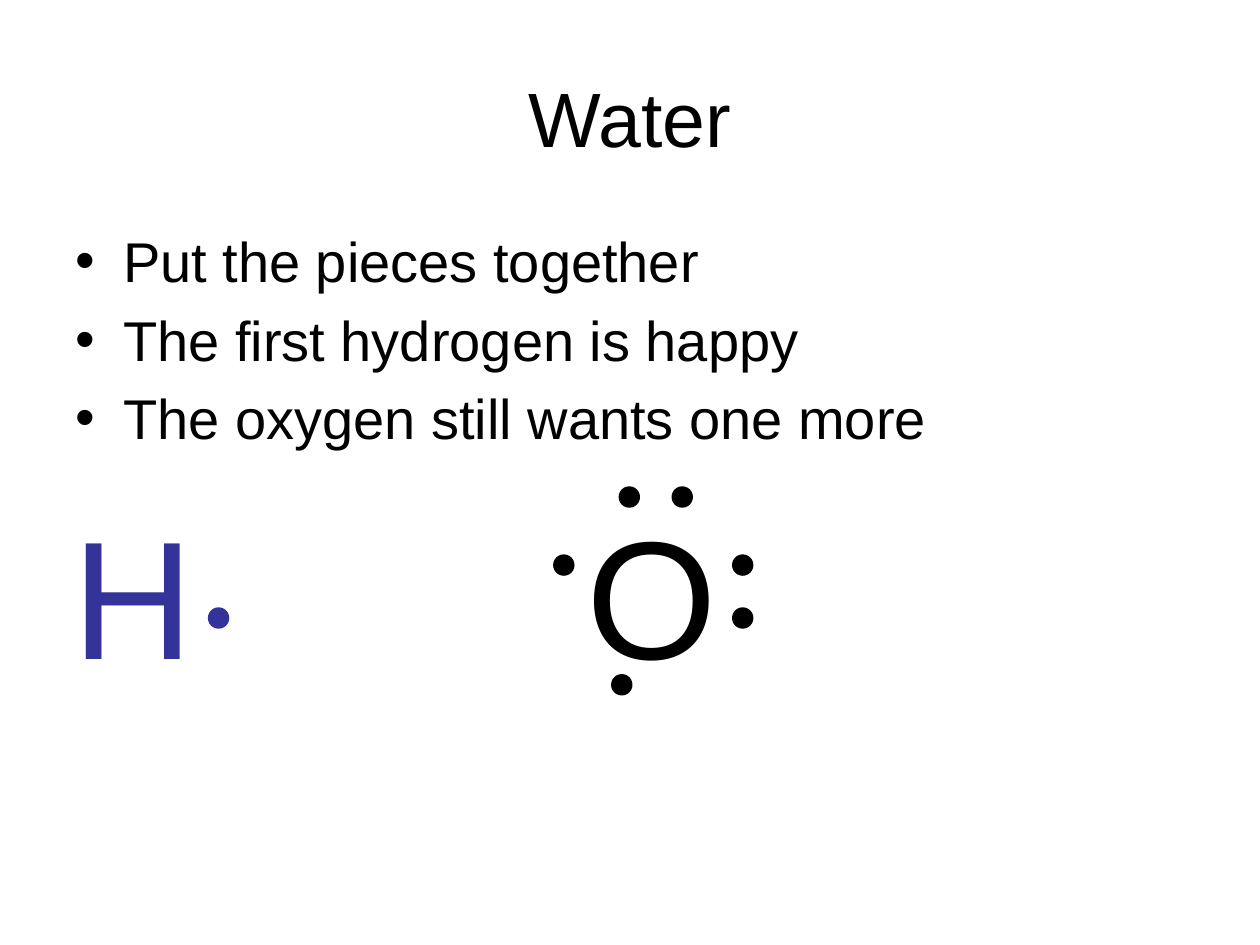
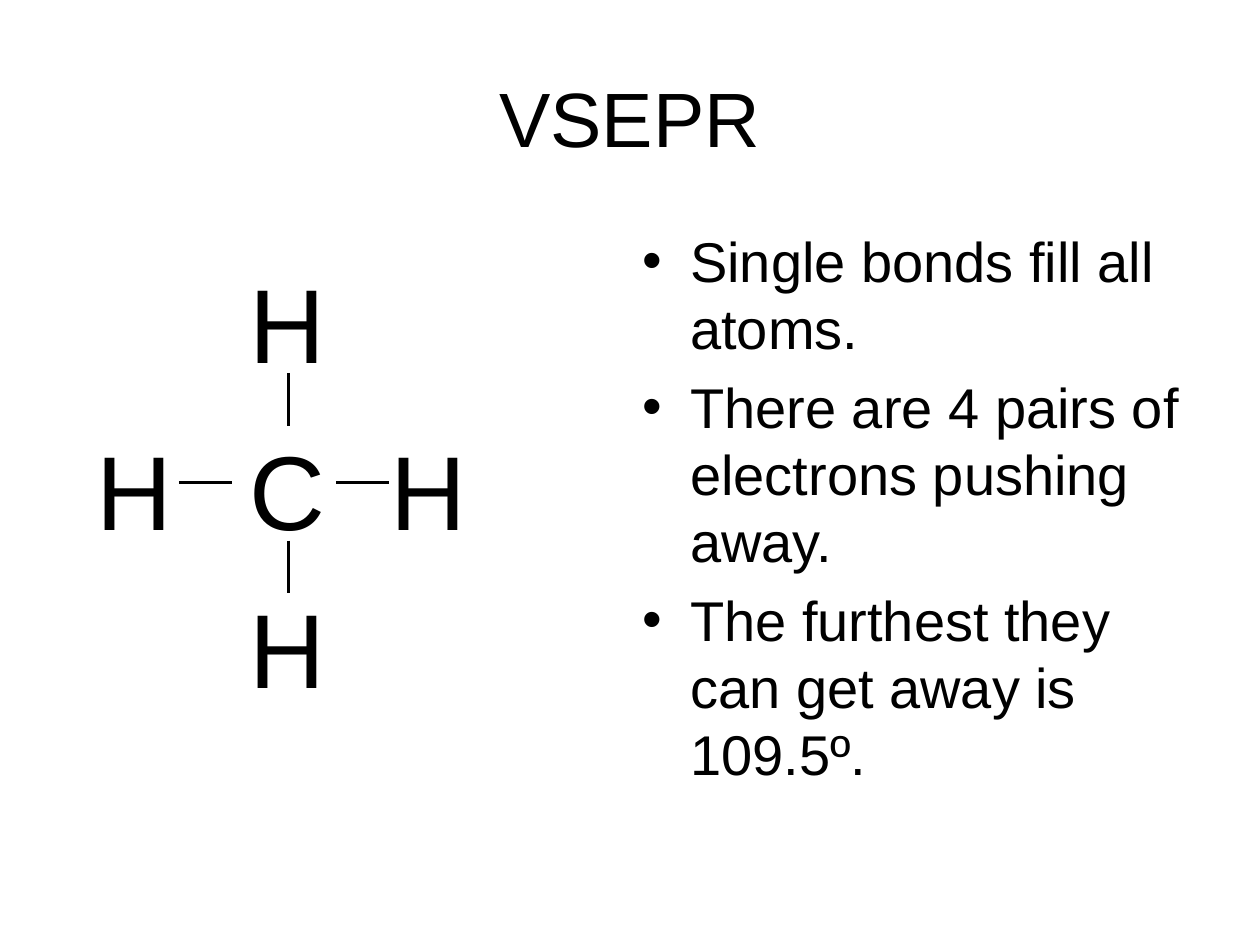
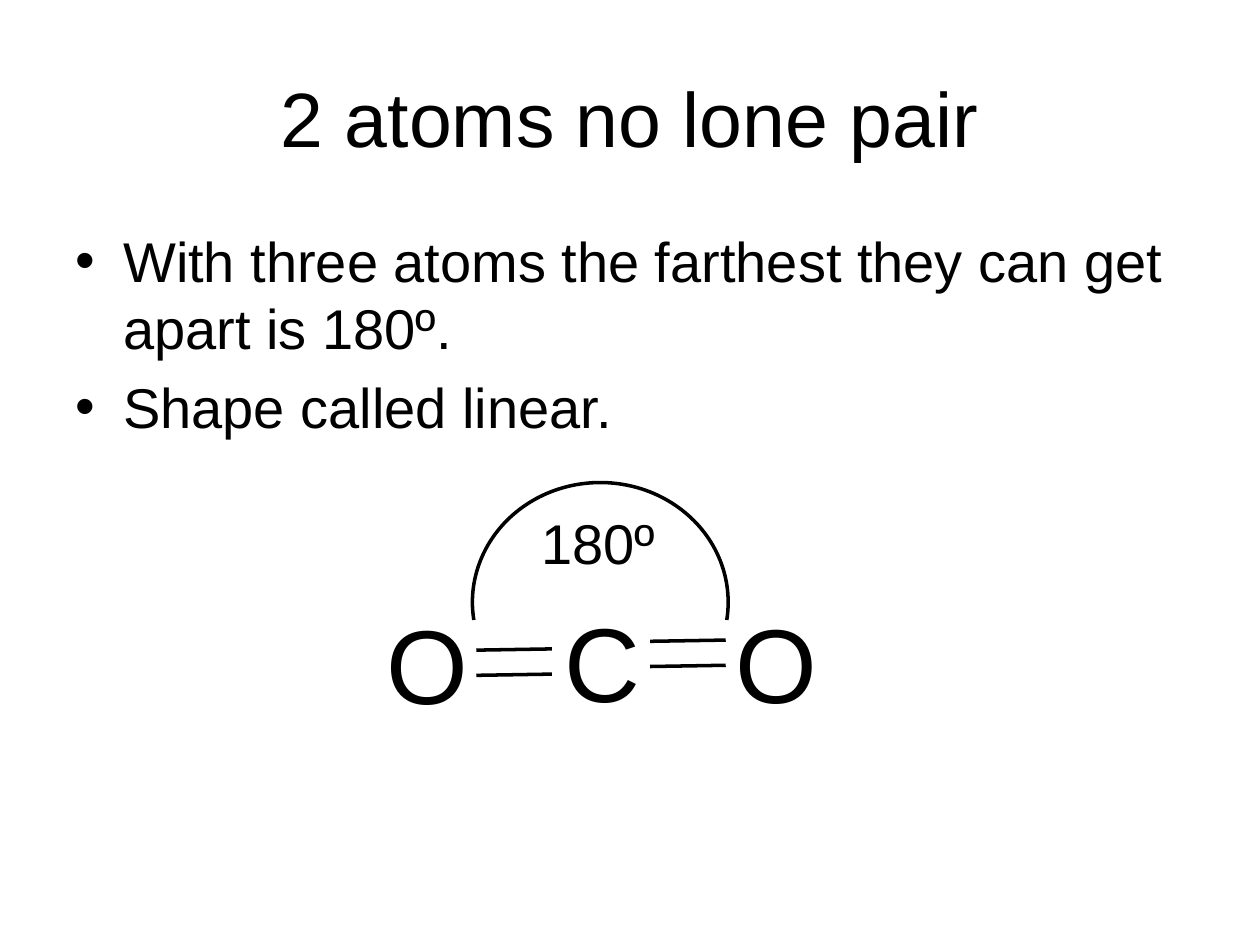
from dataclasses import dataclass
from typing import Any

from lxml import etree
from pptx import Presentation
from pptx.dml.color import RGBColor
from pptx.enum import shapes, text
from pptx.oxml import ns
from pptx import util as u

# Shared style
EMU_PER_PX = 9144  # 100 px to the inch
FONT = "Arial"
BLACK = RGBColor(0x00, 0x00, 0x00)
WHITE = RGBColor(0xFF, 0xFF, 0xFF)
BLUE = RGBColor(0x33, 0x33, 0x99)
TITLE_SIZE, BODY_SIZE, ATOM_SIZE, BIG_ATOM_SIZE = 44, 32, 60, 96
BULLET_INDENT = 38
BULLET_GAP = 6.4  # a fifth of the body size
LINE_WIDTH = 2
DOT = 17
ATOM_WIDTH = 92


@dataclass(frozen=True)
class Area:
    left: int
    top: int
    width: int
    height: int


@dataclass(frozen=True)
class Label:
    words: str
    area: Area
    size: int = ATOM_SIZE
    colour: RGBColor = BLACK


@dataclass(frozen=True)
class Bond:
    x1: int
    y1: int
    x2: int
    y2: int


@dataclass(frozen=True)
class DottedAtom:
    label: Label
    dots: tuple[tuple[int, int], ...]


TITLE_AREA = Area(50, 30, 900, 125)


def px(length: int) -> u.Emu:
    return u.Emu(length * EMU_PER_PX)


def frame(area: Area) -> tuple[u.Emu, ...]:
    return px(area.left), px(area.top), px(area.width), px(area.height)


def add_run(para: Any, words: str, size: int, colour: RGBColor = BLACK) -> None:
    span = para.add_run()
    span.text = words
    span.font.name = FONT
    span.font.size = u.Pt(size)
    span.font.color.rgb = colour


def add_page(deck: Any, title: str) -> Any:
    """Add a title-only page and format its title."""
    page = deck.slides.add_slide(deck.slide_layouts[5])
    page.background.fill.solid()
    page.background.fill.fore_color.rgb = WHITE
    box = page.shapes.title
    box.left, box.top, box.width, box.height = frame(TITLE_AREA)
    box.text_frame.auto_size = text.MSO_AUTO_SIZE.NONE
    box.text_frame.vertical_anchor = text.MSO_ANCHOR.MIDDLE
    para = box.text_frame.paragraphs[0]
    para.alignment = text.PP_ALIGN.CENTER
    add_run(para, title, TITLE_SIZE)
    return page


def add_bullets(page: Any, area: Area, lines: list[str]) -> None:
    body = page.shapes.add_textbox(*frame(area)).text_frame
    body.word_wrap = True
    for index, line in enumerate(lines):
        para = body.add_paragraph() if index else body.paragraphs[0]
        para.space_before = u.Pt(BULLET_GAP)
        props = para._p.get_or_add_pPr()
        props.set("marL", str(px(BULLET_INDENT)))
        props.set("indent", str(-px(BULLET_INDENT)))
        etree.SubElement(props, ns.qn("a:buFont"), typeface=FONT)
        etree.SubElement(props, ns.qn("a:buChar"), char="•")
        add_run(para, line, BODY_SIZE)


def add_label(parent: Any, label: Label) -> None:
    box = parent.shapes.add_textbox(*frame(label.area))
    box.text_frame.word_wrap = True
    box.text_frame.auto_size = text.MSO_AUTO_SIZE.SHAPE_TO_FIT_TEXT
    add_run(box.text_frame.paragraphs[0], label.words, label.size, label.colour)


def add_dotted_atom(page: Any, atom: DottedAtom) -> None:
    """Group a letter with its dots."""
    group = page.shapes.add_group_shape()
    add_label(group, atom.label)
    for left, top in atom.dots:
        dot = group.shapes.add_shape(
            shapes.MSO_SHAPE.OVAL, *frame(Area(left, top, DOT, DOT)))
        dot.shadow.inherit = False
        dot.fill.solid()
        dot.fill.fore_color.rgb = atom.label.colour
        dot.line.fill.background()


def style_line(line: Any) -> None:
    line.color.rgb = BLACK
    line.width = u.Pt(LINE_WIDTH)


def add_bond(page: Any, bond: Bond) -> None:
    line = page.shapes.add_connector(
        shapes.MSO_CONNECTOR.STRAIGHT,
        px(bond.x1), px(bond.y1), px(bond.x2), px(bond.y2))
    style_line(line.line)
    etree.SubElement(line._element.spPr, ns.qn("a:effectLst"))


def add_angle_arc(page: Any, area: Area, start: int, end: int) -> None:
    """Draw a clockwise arc between two angles in degrees."""
    arc = page.shapes.add_shape(shapes.MSO_SHAPE.ARC, *frame(area))
    arc.shadow.inherit = False
    arc.fill.background()
    style_line(arc.line)
    for index, degrees in enumerate((start, end)):
        arc.adjustments[index] = degrees * 0.6


def atom_label(symbol: str, left: int, top: int) -> Label:
    return Label(symbol, Area(left, top, ATOM_WIDTH, 110))


def big_atom(symbol: str, left: int, colour: RGBColor) -> Label:
    return Label(symbol, Area(left, 385, ATOM_WIDTH, 170), BIG_ATOM_SIZE, colour)


def build_water(deck: Any) -> None:
    page = add_page(deck, "Water")
    add_bullets(page, Area(50, 175, 900, 107), [
        "Put the pieces together",
        "The first hydrogen is happy",
        "The oxygen still wants one more",
    ])
    # Letters with dots
    hydrogen = DottedAtom(big_atom("H", 48, BLUE), ((165, 482),))
    oxygen = DottedAtom(big_atom("O", 456, BLACK), (
        (581, 440), (581, 482),  # right
        (533, 386), (491, 386),  # top
        (439, 440), (485, 535),  # left and bottom
    ))
    for atom in (hydrogen, oxygen):
        add_dotted_atom(page, atom)


def build_vsepr(deck: Any) -> None:
    page = add_page(deck, "VSEPR")
    add_bullets(page, Area(500, 175, 450, 495), [
        "Single bonds fill all atoms.",
        "There are 4 pairs of electrons pushing away.",
        "The furthest they can get away is 109.5º.",
    ])
    # Letters
    column, row = 188, 333
    add_label(page, atom_label("C", column, row))
    for left, top in ((300, row), (67, row), (column, 458), (column, 200)):
        add_label(page, atom_label("H", left, top))
    # Single bonds
    bond_length = 42
    for left in (267, 142):
        add_bond(page, Bond(left, 383, left + bond_length, 383))
    for top in (429, 296):
        add_bond(page, Bond(229, top, 229, top + bond_length))


def build_linear(deck: Any) -> None:
    page = add_page(deck, "2 atoms no lone pair")
    add_bullets(page, Area(50, 175, 900, 193), [
        "With three atoms the farthest they can get apart is 180º.",
        "Shape called linear.",
    ])
    # Letters
    for symbol, left, top in (("C", 438, 469), ("O", 574, 470), ("O", 297, 471)):
        add_label(page, atom_label(symbol, left, top))
    # Paired lines
    for left, top in ((516, 509), (378, 516)):
        for drop in (0, 20):
            add_bond(page, Bond(left, top + drop, left + 60, top + drop - 1))
    # Arc and its label
    add_angle_arc(page, Area(375, 383, 203, 190), 172, 8)
    add_label(page, Label("180º", Area(420, 399, 196, 63), BODY_SIZE))


def main() -> None:
    deck = Presentation()
    deck.slide_width, deck.slide_height = px(1000), px(750)
    build_water(deck)
    build_vsepr(deck)
    build_linear(deck)
    deck.save("out.pptx")


if __name__ == "__main__":
    main()
